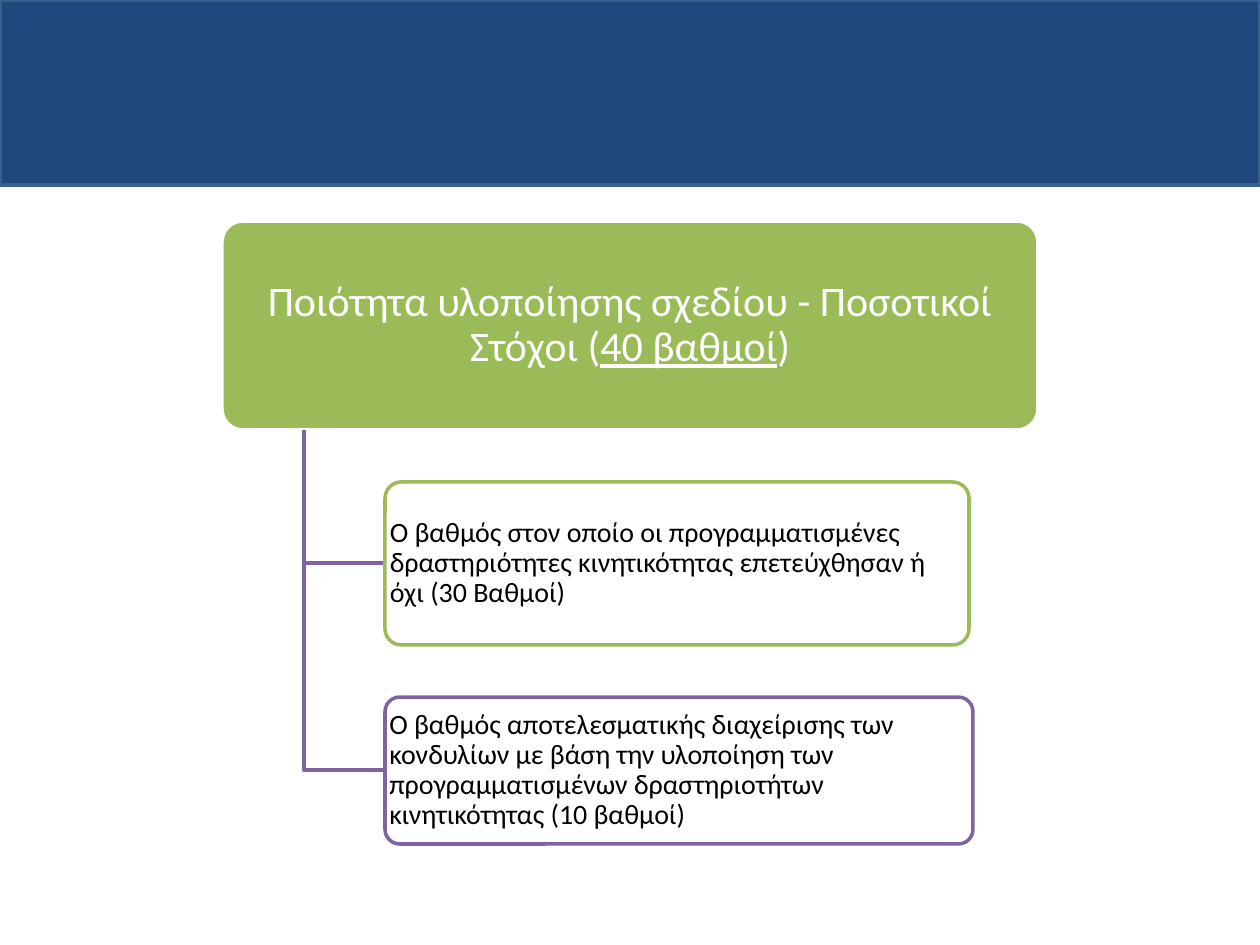
import pptx
import pptx.util
import pptx.dml.color
import pptx.enum.shapes
import pptx.enum.text
import lxml.etree

SCALE = 914400 / 126
HUES = {"navy": "1F497D", "edge": "3A5F8C", "green": "9BBB59",
        "violet": "8064A2", "white": "FFFFFF", "black": "000000"}
KINDS = pptx.enum.shapes.MSO_SHAPE
ALIGN = pptx.enum.text.PP_ALIGN


def px(count):
    return pptx.util.Emu(round(count * SCALE))


def hue(name):
    return pptx.dml.color.RGBColor.from_string(HUES[name])


class Page:
    """Holds the slide and the style shared by its elements."""
    font = "Calibri"
    weight = 2
    frame = {"word_wrap": True, "margin_left": 0, "margin_right": 0,
             "margin_top": 0, "margin_bottom": 0,
             "vertical_anchor": pptx.enum.text.MSO_ANCHOR.MIDDLE}

    def __init__(self, slide):
        self.slide = slide

    def paint(self, shape, fill, line):
        shape.shadow.inherit = False
        if fill:
            shape.fill.solid()
            shape.fill.fore_color.rgb = hue(fill)
        else:
            shape.fill.background()
        shape.line.color.rgb = hue(line)
        shape.line.width = pptx.util.Pt(self.weight)

    def box(self, area, fill, line, kind=KINDS.RECTANGLE):
        shape = self.slide.shapes.add_shape(kind, *map(px, area))
        self.paint(shape, fill, line)
        return shape

    def card(self, area, fill, line, runs, size, ink, align):
        """Rounded box with text; runs are (text, underline) pairs."""
        shape = self.box(area, fill, line, KINDS.ROUNDED_RECTANGLE)
        shape.adjustments[0] = 0.1
        for key, value in self.frame.items():
            setattr(shape.text_frame, key, value)
        para = shape.text_frame.paragraphs[0]
        para.alignment = align
        para.line_spacing = 0.9
        for text, under in runs:
            run = para.add_run()
            run.text = text
            style = {"name": self.font, "size": pptx.util.Pt(size), "underline": under}
            for key, value in style.items():
                setattr(run.font, key, value)
            run.font.color.rgb = hue(ink)
        return shape

    def fade(self, shape, share):
        """Set the opacity of a solid fill in percent."""
        tone = shape.fill._xPr.find(".//" + pptx.oxml.ns.qn("a:srgbClr"))
        lxml.etree.SubElement(tone, pptx.oxml.ns.qn("a:alpha"), val=str(share * 1000))

    def elbow(self, left, top, right, low):
        path = self.slide.shapes.build_freeform(left, top, scale=SCALE)
        path.add_line_segments([(left, low), (right, low)], close=False)
        self.paint(path.convert_to_shape(), None, "violet")


def main():
    deck = pptx.Presentation()
    deck.slide_width, deck.slide_height = px(1260), px(945)
    page = Page(deck.slides.add_slide(deck.slide_layouts[6]))

    page.box((0, 0, 1260, 185), "navy", "edge")
    title = [("Ποιότητα υλοποίησης σχεδίου - Ποσοτικοί Στόχοι (", False),
             ("40 βαθμοί", True), (")", False)]
    page.card((222, 221, 816, 209), "green", "white", title, 24, "white", ALIGN.CENTER)

    left = 385
    goals = [
        (482, 584, 163, "green",
         "Ο βαθμός στον οποίο οι προγραμματισμένες δραστηριότητες "
         "κινητικότητας επετεύχθησαν ή όχι (30 Βαθμοί)"),
        (697, 588, 147, "violet",
         "Ο βαθμός αποτελεσματικής διαχείρισης των κονδυλίων με βάση την "
         "υλοποίηση των προγραμματισμένων δραστηριοτήτων κινητικότητας (10 βαθμοί)"),
    ]
    for top, width, height, line, text in goals:
        page.elbow(304, 430, left, top + height // 2)
        card = page.card((left, top, width, height), "white", line,
                         [(text, False)], 16, "black", ALIGN.LEFT)
        page.fade(card, 90)

    deck.save("out.pptx")


if __name__ == "__main__":
    main()
